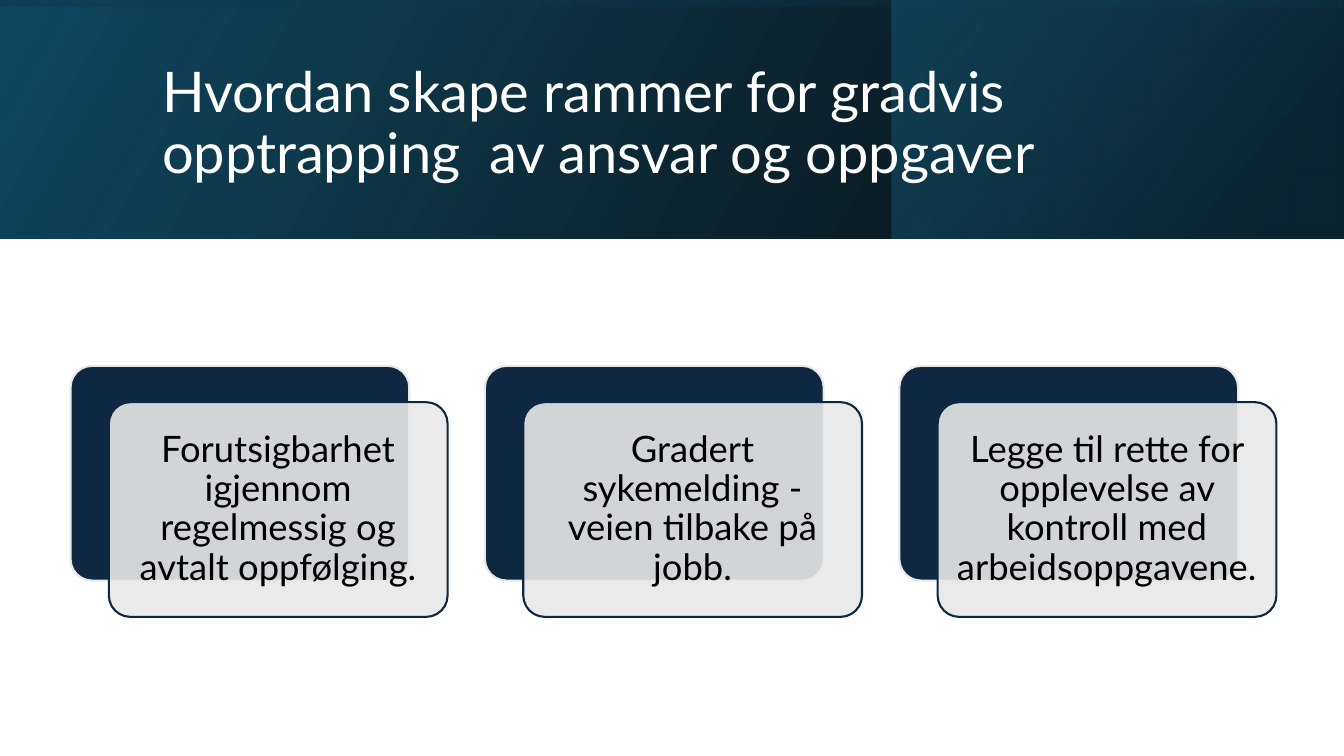
from pptx import Presentation
from pptx.dml.color import RGBColor
from pptx.enum.shapes import MSO_SHAPE
from pptx.enum.text import MSO_ANCHOR, PP_ALIGN
from pptx.util import Emu, Pt
from lxml.etree import SubElement
from pptx.oxml.ns import qn

EMU_PER_PX = 9144
SLIDE_WIDTH, SLIDE_HEIGHT = 1333, 750
BANNER_HEIGHT = 237
CARD_WIDTH, CARD_HEIGHT = 336, 213
CARD_LEFT, CARD_TOP, CARD_PITCH = 70, 363, 411
FRONT_SHIFT_X, FRONT_SHIFT_Y = 38, 36

BLACK = RGBColor(0x00, 0x00, 0x00)
WHITE = RGBColor(0xFF, 0xFF, 0xFF)
NAVY = RGBColor(0x0E, 0x28, 0x41)
PALE_GREY = RGBColor(0xE8, 0xE8, 0xE8)
DEEP_BLUE = RGBColor(0x10, 0x48, 0x62)
DARK_TEAL = RGBColor(0x0B, 0x30, 0x41)
TEAL = RGBColor(0x15, 0x60, 0x82)

TITLE = "Hvordan skape rammer for gradvis opptrapping  av ansvar og oppgaver"
MEASURES = [
    "Forutsigbarhet igjennom regelmessig og avtalt oppfølging.",
    "Gradert sykemelding - veien tilbake på jobb.",
    "Legge til rette for opplevelse av kontroll med arbeidsoppgavene.",
]


def px(length):
    return Emu(length * EMU_PER_PX)


class SlideBuilder:
    font = "Lato"
    line_spacing = 0.9
    outline = Pt(1.5)

    def __init__(self, presentation):
        self.slide = presentation.slides.add_slide(presentation.slide_layouts[6])

    def shape(self, kind, box):
        shape = self.slide.shapes.add_shape(kind, *map(px, box))
        shape.shadow.inherit = False
        return shape

    def set_alphas(self, shape, alphas):
        colours = shape._element.spPr.findall(".//" + qn("a:srgbClr"))
        for colour, alpha in zip(colours, alphas):
            SubElement(colour, qn("a:alpha")).set("val", str(alpha * 1000))

    def gradient_band(self, box, stops, angle, rotation=0):
        band = self.shape(MSO_SHAPE.RECTANGLE, box)
        band.rotation = rotation
        band._element.spPr.find(qn("a:xfrm")).set("flipH", "1")
        band.fill.gradient()
        band.fill.gradient_angle = 360 - angle
        for stop, (position, colour, _) in zip(band.fill.gradient_stops, stops):
            stop.position = position / 100
            stop.color.rgb = colour
        band.line.fill.background()
        self.set_alphas(band, [alpha for _, _, alpha in stops])

    def panel(self, left, top, fill, border):
        panel = self.shape(MSO_SHAPE.ROUNDED_RECTANGLE, (left, top, CARD_WIDTH, CARD_HEIGHT))
        panel.adjustments[0] = 0.1
        panel.fill.solid()
        panel.fill.fore_color.rgb = fill
        panel.line.color.rgb = border
        panel.line.width = self.outline
        return panel

    def fill_text(self, frame, text, size, colour, align):
        frame.word_wrap = True
        frame.vertical_anchor = MSO_ANCHOR.MIDDLE
        paragraph = frame.paragraphs[0]
        paragraph.text = text
        paragraph.alignment = align
        paragraph.line_spacing = self.line_spacing
        font = paragraph.runs[0].font
        font.name, font.size, font.color.rgb = self.font, Pt(size), colour

    def title(self, box, text):
        heading = self.slide.shapes.add_textbox(*map(px, box))
        self.fill_text(heading.text_frame, text, 40, WHITE, PP_ALIGN.LEFT)

    def card(self, left, top, text):
        self.panel(left, top, NAVY, PALE_GREY)
        front = self.panel(left + FRONT_SHIFT_X, top + FRONT_SHIFT_Y, PALE_GREY, NAVY)
        self.set_alphas(front, [90])
        frame = front.text_frame
        frame.margin_left = frame.margin_right = px(11)
        frame.margin_top = frame.margin_bottom = px(11)
        self.fill_text(frame, text, 26, BLACK, PP_ALIGN.CENTER)


def main():
    presentation = Presentation()
    presentation.slide_width = px(SLIDE_WIDTH)
    presentation.slide_height = px(SLIDE_HEIGHT)
    builder = SlideBuilder(presentation)

    builder.gradient_band((0, 0, SLIDE_WIDTH, BANNER_HEIGHT),
                          [(0, BLACK, 96), (100, DEEP_BLUE, 100)], 330)
    builder.gradient_band((884, 0, 448, BANNER_HEIGHT),
                          [(19, DARK_TEAL, 68), (100, TEAL, 48)], 320)
    quarter_turn_shift = (SLIDE_WIDTH - BANNER_HEIGHT) // 2
    builder.gradient_band((quarter_turn_shift, -quarter_turn_shift, BANNER_HEIGHT, SLIDE_WIDTH),
                          [(23, DEEP_BLUE, 16), (99, BLACK, 45)], 350, rotation=270)

    builder.title((151, 38, 1063, 172), TITLE)
    for column, measure in enumerate(MEASURES):
        builder.card(CARD_LEFT + column * CARD_PITCH, CARD_TOP, measure)

    presentation.save("out.pptx")


if __name__ == "__main__":
    main()
